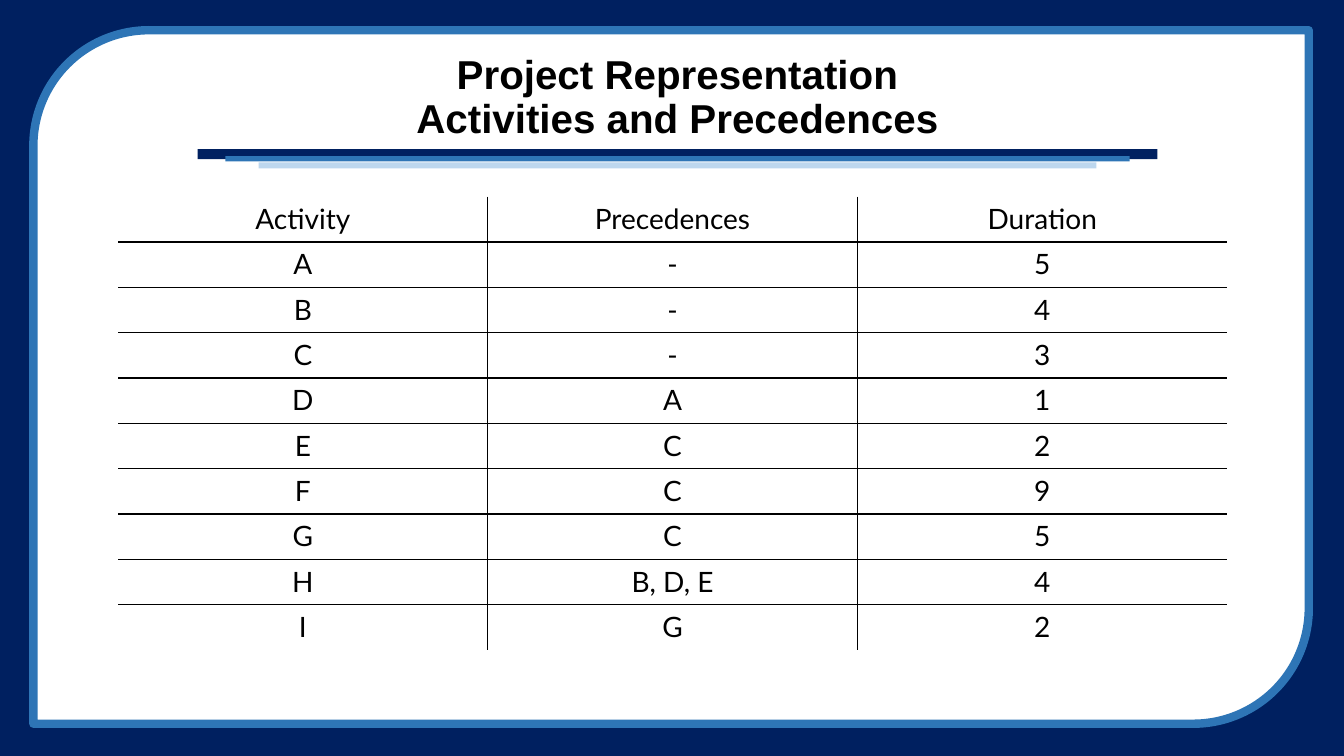
import pptx
import pptx.dml.color
import pptx.enum.shapes
import pptx.enum.text
import pptx.oxml.ns
import pptx.util
from lxml import etree

RGB = pptx.dml.color.RGBColor
NAVY = RGB(0x00, 0x20, 0x60)
BLUE = RGB(0x2E, 0x75, 0xB6)
PALE = RGB(0xBD, 0xD7, 0xEE)
WHITE = RGB(0xFF, 0xFF, 0xFF)
BLACK = RGB(0x00, 0x00, 0x00)

WIDE = pptx.util.Inches(13.33)
HIGH = pptx.util.Inches(7.5)
MID = 50.41  # centre of title and bars, percent of the width
SPAN = 71.42  # width of title and top bar

TITLE = "Project Representation\nActivities and Precedences"
# Width, top, height and colour of each bar under the title
BARS = [
    (SPAN, 19.73, 1.33, NAVY),
    (67.29, 20.67, 0.67, BLUE),
    (62.34, 21.47, 0.8, PALE),
]
ROWS = [
    ("Activity", "Precedences", "Duration"),
    ("A", "-", "5"),
    ("B", "-", "4"),
    ("C", "-", "3"),
    ("D", "A", "1"),
    ("E", "C", "2"),
    ("F", "C", "9"),
    ("G", "C", "5"),
    ("H", "B, D, E", "4"),
    ("I", "G", "2"),
]


def area(left, top, width, height):
    """Turn percents of the slide into lengths."""
    return (int(WIDE * left / 100), int(HIGH * top / 100),
            int(WIDE * width / 100), int(HIGH * height / 100))


def add_block(slide, kind, box, fill, line=None):
    shape = slide.shapes.add_shape(kind, *area(*box))
    shape.shadow.inherit = False
    shape.fill.solid()
    shape.fill.fore_color.rgb = fill
    if line is None:
        shape.line.fill.background()
    else:
        shape.line.color.rgb = line
        shape.line.width = pptx.util.Pt(6)


def style(para, name, size, bold=False):
    para.alignment = pptx.enum.text.PP_ALIGN.CENTER
    for run in para.runs:
        run.font.name = name
        run.font.size = pptx.util.Pt(size)
        run.font.bold = bold
        run.font.color.rgb = BLACK


def add_title(slide):
    box = slide.shapes.add_textbox(*area(MID - SPAN / 2, 6.53, SPAN, 12.93))
    frame = box.text_frame
    frame.word_wrap = True
    frame.vertical_anchor = pptx.enum.text.MSO_ANCHOR.MIDDLE
    para = frame.paragraphs[0]
    para.text = TITLE
    para.line_spacing = 0.9
    style(para, "Arial", 28.8, True)


def add_edge(cell, side, shown):
    name = pptx.oxml.ns.qn
    edge = etree.SubElement(cell._tc.get_or_add_tcPr(), name("a:ln" + side))
    edge.set("w", str(pptx.util.Pt(1)))
    if shown:
        fill = etree.SubElement(edge, name("a:solidFill"))
        etree.SubElement(fill, name("a:srgbClr")).set("val", str(BLACK))
    else:
        etree.SubElement(edge, name("a:noFill"))


def add_grid(slide):
    rows, cols = len(ROWS), len(ROWS[0])
    box = area(8.78, 26, 82.52, 60)
    table = slide.shapes.add_table(rows, cols, *box).table
    table.first_row = False
    table.horz_banding = False
    for r, words in enumerate(ROWS):
        for c, word in enumerate(words):
            cell = table.cell(r, c)
            # Only inner edges are drawn
            inner = {"L": c > 0, "R": c < cols - 1,
                     "T": r > 0, "B": r < rows - 1}
            for side, shown in inner.items():
                add_edge(cell, side, shown)
            cell.fill.background()
            cell.margin_left = cell.margin_right = pptx.util.Inches(0.13)
            cell.text_frame.text = word
            style(cell.text_frame.paragraphs[0], "Lato", 20)


def main():
    deck = pptx.Presentation()
    deck.slide_width, deck.slide_height = WIDE, HIGH
    slide = deck.slides.add_slide(deck.slide_layouts[6])
    kinds = pptx.enum.shapes.MSO_SHAPE

    # Navy ground and rounded frame
    add_block(slide, kinds.RECTANGLE, (0, 0, 100, 100), NAVY)
    add_block(slide, kinds.ROUND_2_DIAG_RECTANGLE,
              (2.48, 4, 94.9, 91.73), WHITE, BLUE)

    # Title with its bars
    for width, top, height, fill in BARS:
        add_block(slide, kinds.RECTANGLE,
                  (MID - width / 2, top, width, height), fill)
    add_title(slide)

    # Activity table
    add_grid(slide)
    deck.save("out.pptx")


if __name__ == "__main__":
    main()
